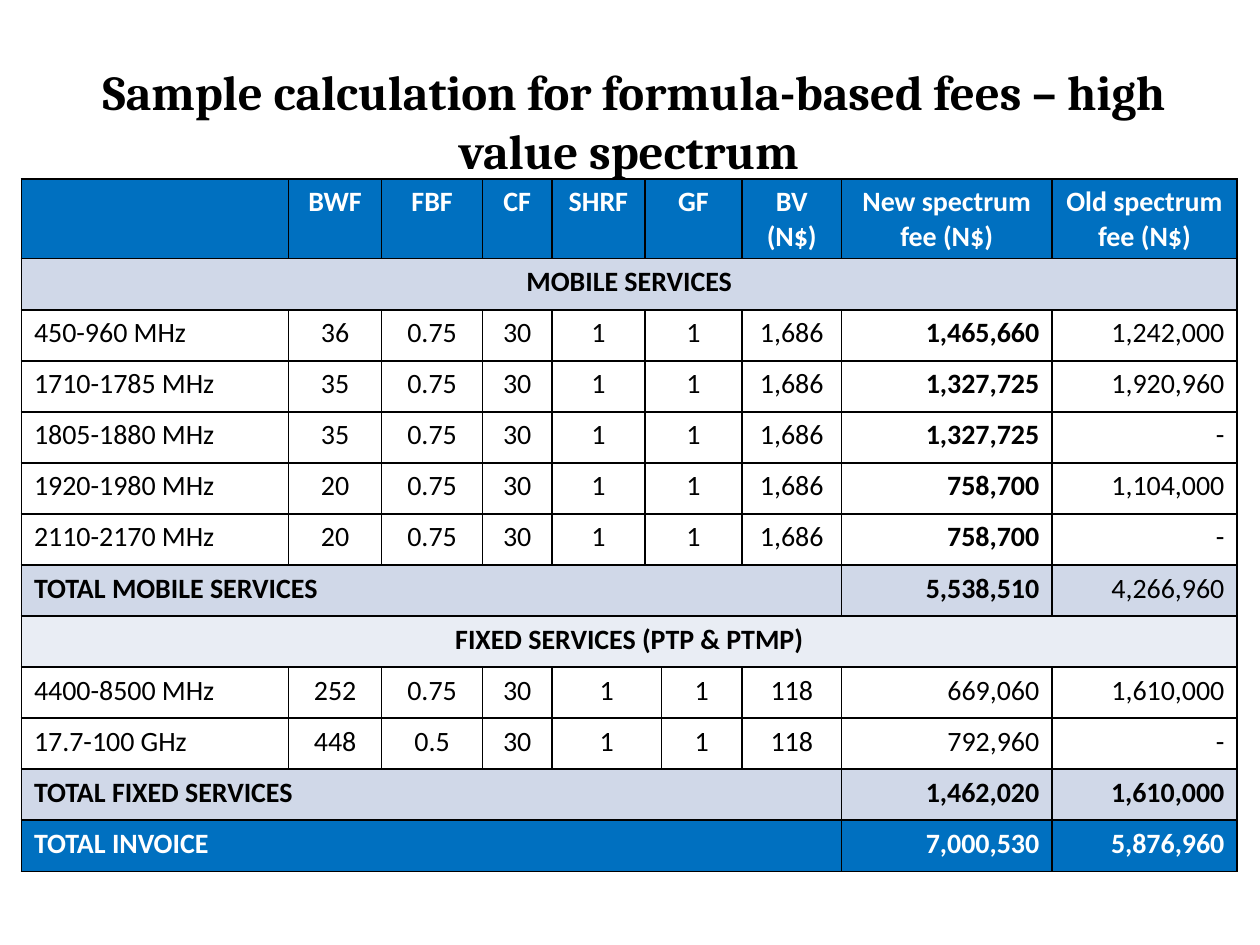
from dataclasses import dataclass

from lxml import etree
from pptx import Presentation
from pptx.dml.color import RGBColor
from pptx.enum.text import MSO_ANCHOR, PP_ALIGN
from pptx.oxml.ns import qn
from pptx.util import Inches, Pt

LEFT, CENTER, RIGHT = PP_ALIGN.LEFT, PP_ALIGN.CENTER, PP_ALIGN.RIGHT
BOTTOM = MSO_ANCHOR.BOTTOM


@dataclass(frozen=True)
class Theme:
    title_font: str = "Cambria"
    body_font: str = "Calibri"
    title_size: float = 27.9
    body_size: float = 16
    border_width: float = 1
    black: str = "000000"
    white: str = "FFFFFF"
    blue: str = "0070C0"
    band: str = "D0D8E8"
    pale_band: str = "E9EDF4"


THEME = Theme()


@dataclass(frozen=True)
class RowStyle:
    """Spans and alignments run over the visible cells of a row."""
    spans: tuple
    aligns: tuple
    bold: tuple
    fill: str
    ink: str = THEME.black


COLUMN_WIDTHS = (2.12, 0.74, 0.8, 0.55, 0.74, 0.13, 0.64, 0.79, 1.67, 1.47)
TABLE_LEFT, TABLE_TOP, ROW_AREA = 0.17, 1.42, 5.27

MOBILE_SPANS = (1, 1, 1, 1, 1, 2, 1, 1, 1)
FIXED_SPANS = (1, 1, 1, 1, 2, 1, 1, 1, 1)
TOTAL_SPANS = (8, 1, 1)
BAND_ALIGNS = (LEFT, CENTER, CENTER, CENTER, CENTER, CENTER, CENTER, RIGHT, RIGHT)
TOTAL_ALIGNS = (LEFT, RIGHT, RIGHT)
ALL_BOLD, TOTAL_BOLD = (True,) * 9, (True,) * 3
NEW_FEE_BOLD = (False,) * 7 + (True, False)

HEADER = RowStyle(MOBILE_SPANS, (CENTER,) * 9, ALL_BOLD, THEME.blue, THEME.white)
MOBILE_SECTION = RowStyle((10,), (CENTER,), (True,), THEME.band)
FIXED_SECTION = RowStyle((10,), (CENTER,), (True,), THEME.pale_band)
MOBILE = RowStyle(MOBILE_SPANS, BAND_ALIGNS, NEW_FEE_BOLD, THEME.white)
FIXED = RowStyle(FIXED_SPANS, BAND_ALIGNS, (False,) * 9, THEME.white)
MOBILE_TOTAL = RowStyle(TOTAL_SPANS, TOTAL_ALIGNS, (True, True, False), THEME.band)
FIXED_TOTAL = RowStyle(TOTAL_SPANS, TOTAL_ALIGNS, TOTAL_BOLD, THEME.band)
INVOICE = RowStyle(TOTAL_SPANS, TOTAL_ALIGNS, TOTAL_BOLD, THEME.blue, THEME.white)

FEE_ROWS = (
    (HEADER, ("", "BWF", "FBF", "CF", "SHRF", "GF", "BV (N$)",
              "New spectrum fee (N$)", "Old spectrum fee (N$)")),
    (MOBILE_SECTION, ("MOBILE SERVICES",)),
    (MOBILE, ("450-960 MHz", "36", "0.75", "30", "1", "1", "1,686", "1,465,660", "1,242,000")),
    (MOBILE, ("1710-1785 MHz", "35", "0.75", "30", "1", "1", "1,686", "1,327,725", "1,920,960")),
    (MOBILE, ("1805-1880 MHz", "35", "0.75", "30", "1", "1", "1,686", "1,327,725", "-")),
    (MOBILE, ("1920-1980 MHz", "20", "0.75", "30", "1", "1", "1,686", "758,700", "1,104,000")),
    (MOBILE, ("2110-2170 MHz", "20", "0.75", "30", "1", "1", "1,686", "758,700", "-")),
    (MOBILE_TOTAL, ("TOTAL MOBILE SERVICES", "5,538,510", "4,266,960")),
    (FIXED_SECTION, ("FIXED SERVICES (PTP & PTMP)",)),
    (FIXED, ("4400-8500 MHz", "252", "0.75", "30", "1", "1", "118", "669,060", "1,610,000")),
    (FIXED, ("17.7-100 GHz", "448", "0.5", "30", "1", "1", "118", "792,960", "-")),
    (FIXED_TOTAL, ("TOTAL FIXED SERVICES", "1,462,020", "1,610,000")),
    (INVOICE, ("TOTAL INVOICE", "7,000,530", "5,876,960")),
)


def write(paragraph, text, font_name, size, ink, bold, align):
    paragraph.text = text
    paragraph.alignment = align
    font = paragraph.font
    font.name, font.size, font.bold = font_name, Pt(size), bold
    font.color.rgb = RGBColor.from_string(ink)


def add_title(slide, text):
    box = slide.shapes.add_textbox(Inches(0.49), Inches(0.69), Inches(9), Inches(1.16))
    frame = box.text_frame
    frame.word_wrap = True
    frame.vertical_anchor = BOTTOM
    frame.margin_bottom = Inches(0.43)
    write(frame.paragraphs[0], text, THEME.title_font, THEME.title_size,
          THEME.black, True, CENTER)


def finish_cell(cell, fill):
    """Draw the four borders, then the fill, in the order the schema asks for."""
    properties = cell._tc.get_or_add_tcPr()
    for side in ("a:lnL", "a:lnR", "a:lnT", "a:lnB"):
        line = etree.SubElement(properties, qn(side), w=str(Pt(THEME.border_width)))
        solid = etree.SubElement(line, qn("a:solidFill"))
        etree.SubElement(solid, qn("a:srgbClr"), val=THEME.black)
    cell.fill.solid()
    cell.fill.fore_color.rgb = RGBColor.from_string(fill)


def fill_row(table, row, style, texts):
    for column in range(len(COLUMN_WIDTHS)):
        finish_cell(table.cell(row, column), style.fill)
    column = 0
    for text, span, align, bold in zip(texts, style.spans, style.aligns, style.bold):
        cell = table.cell(row, column)
        if span > 1:
            cell.merge(table.cell(row, column + span - 1))
        write(cell.text_frame.paragraphs[0], text, THEME.body_font, THEME.body_size,
              style.ink, bold, align)
        column += span


def add_fee_table(slide):
    table = slide.shapes.add_table(
        len(FEE_ROWS), len(COLUMN_WIDTHS), Inches(TABLE_LEFT), Inches(TABLE_TOP),
        Inches(sum(COLUMN_WIDTHS)), Inches(ROW_AREA)).table
    table.first_row = table.horz_banding = False
    for column, width in zip(table.columns, COLUMN_WIDTHS):
        column.width = Inches(width)
    for row, (style, texts) in enumerate(FEE_ROWS):
        fill_row(table, row, style, texts)


def main():
    deck = Presentation()
    deck.slide_width, deck.slide_height = Inches(10), Inches(7.5)
    slide = deck.slides.add_slide(deck.slide_layouts[6])
    add_title(slide, " Sample calculation for formula-based fees – high value spectrum")
    add_fee_table(slide)
    deck.save("out.pptx")


if __name__ == "__main__":
    main()
